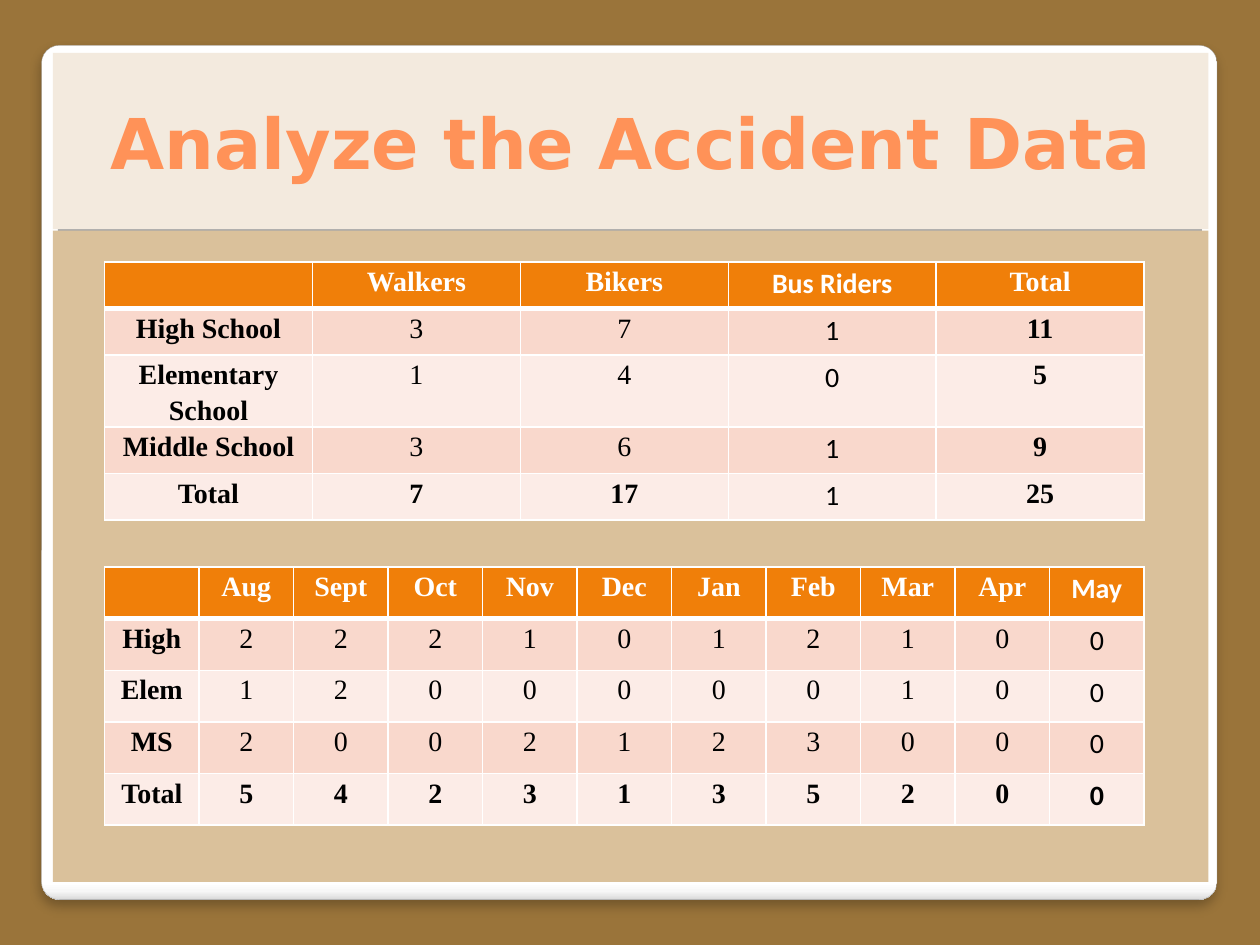
from lxml.etree import SubElement
from pptx import Presentation
from pptx.dml.color import RGBColor
from pptx.enum.shapes import MSO_SHAPE
from pptx.enum.text import MSO_ANCHOR, PP_ALIGN
from pptx.oxml import parse_xml
from pptx.oxml.ns import nsdecls, qn
from pptx.util import Inches, Pt

BROWN = RGBColor(0x9A, 0x74, 0x3A)
TAN = RGBColor(0xDA, 0xC1, 0x9B)
CREAM = RGBColor(0xF3, 0xEA, 0xDE)
GREY = RGBColor(0xA8, 0xA8, 0xA8)
FRAME_LINE = RGBColor(0xA4, 0xA4, 0xA4)
CORAL = RGBColor(0xFF, 0x92, 0x58)
ORANGE = RGBColor(0xF0, 0x7F, 0x09)
PINK = RGBColor(0xF9, 0xD8, 0xCC)
PALE_PINK = RGBColor(0xFC, 0xEC, 0xE7)
WHITE = RGBColor(0xFF, 0xFF, 0xFF)
BLACK = RGBColor(0x00, 0x00, 0x00)

FRAME_STOPS = [(0, "FFFFFF"), (98, "FFFFFF"), (99, "F7F7F7"), (100, "DADADA")]

ACCIDENTS_BY_TRAVEL = [
    ["", "Walkers", "Bikers", "Bus Riders", "Total"],
    ["High School", "3", "7", "1", "11"],
    ["Elementary School", "1", "4", "0", "5"],
    ["Middle School", "3", "6", "1", "9"],
    ["Total", "7", "17", "1", "25"],
]
ACCIDENTS_BY_MONTH = [
    ["", "Aug", "Sept", "Oct", "Nov", "Dec", "Jan", "Feb", "Mar", "Apr", "May"],
    ["High", "2", "2", "2", "1", "0", "1", "2", "1", "0", "0"],
    ["Elem", "1", "2", "0", "0", "0", "0", "0", "1", "0", "0"],
    ["MS", "2", "0", "0", "2", "1", "2", "3", "0", "0", "0"],
    ["Total", "5", "4", "2", "3", "1", "3", "5", "2", "0", "0"],
]


def write_text(text_frame, text, size=16, font="Times New Roman", color=BLACK,
               bold=False, spacing=None):
    paragraph = text_frame.paragraphs[0]
    paragraph.alignment = PP_ALIGN.CENTER
    paragraph.line_spacing = spacing
    paragraph.font.size = Pt(size)
    if not text:
        # An empty cell still needs a size, so that its row does not grow
        SubElement(paragraph._p, qn("a:endParaRPr")).set("sz", str(size * 100))
        return
    run = paragraph.add_run()
    run.text = text
    run.font.size = Pt(size)
    run.font.name = font
    run.font.bold = bold
    run.font.color.rgb = color


def add_panel(slide, left, top, width, height, fill, kind=MSO_SHAPE.RECTANGLE):
    shape = slide.shapes.add_shape(
        kind, Inches(left), Inches(top), Inches(width), Inches(height))
    shape.shadow.inherit = False
    shape.fill.solid()
    shape.fill.fore_color.rgb = fill
    shape.line.fill.background()
    if kind == MSO_SHAPE.ROUNDED_RECTANGLE:
        shape.adjustments[0] = 0.021
    return shape


def shade_frame(shape):
    """Give the frame its vertical gradient, thin line and soft shadow."""
    properties = shape._element.spPr
    stops = "".join(f'<a:gs pos="{position * 1000}"><a:srgbClr val="{color}"/></a:gs>'
                    for position, color in FRAME_STOPS)
    gradient = parse_xml(
        f'<a:gradFill {nsdecls("a")}><a:gsLst>{stops}</a:gsLst>'
        '<a:lin ang="5400000" scaled="0"/></a:gradFill>')
    properties.replace(properties.find(qn("a:solidFill")), gradient)
    shape.line.color.rgb = FRAME_LINE
    shape.line.width = Pt(0.16)
    shadow = parse_xml(
        f'<a:outerShdw {nsdecls("a")} blurRad="{Pt(6)}" dist="{Pt(4)}" dir="5400000" '
        'algn="t" rotWithShape="0"><a:srgbClr val="000000"><a:alpha val="25000"/>'
        '</a:srgbClr></a:outerShdw>')
    properties.find(qn("a:effectLst")).append(shadow)


def set_borders(cell, top=1, bottom=1):
    widths = {"lnL": 1, "lnR": 1, "lnT": top, "lnB": bottom}
    for index, (side, width) in enumerate(widths.items()):
        border = parse_xml(
            f'<a:{side} {nsdecls("a")} w="{Pt(width)}"><a:solidFill>'
            f'<a:srgbClr val="{WHITE}"/></a:solidFill></a:{side}>')
        cell._tc.get_or_add_tcPr().insert(index, border)


def add_data_table(slide, data, top, row_height, calibri_column,
                   bold_columns, plain_cells=()):
    column_count = len(data[0])
    last_row = len(data) - 1
    table = slide.shapes.add_table(
        len(data), column_count, Inches(0.83), Inches(top),
        Inches(8.25), Inches(row_height * len(data))).table
    table.first_row = True
    table.horz_banding = False
    for column in table.columns:
        column.width = Inches(8.25 / column_count)
    for row_index, values in enumerate(data):
        table.rows[row_index].height = Inches(row_height)
        header = row_index == 0
        band = PINK if row_index % 2 else PALE_PINK
        for column_index, text in enumerate(values):
            cell = table.cell(row_index, column_index)
            cell.margin_left = cell.margin_right = Inches(0.07)
            cell.margin_top = cell.margin_bottom = 0
            cell.fill.solid()
            cell.fill.fore_color.rgb = ORANGE if header else band
            set_borders(cell, top=3 if row_index == 1 else 1, bottom=3 if header else 1)
            bold = row_index in (0, last_row) or column_index in bold_columns
            write_text(
                cell.text_frame, text, spacing=1.15,
                font="Calibri" if column_index == calibri_column else "Times New Roman",
                color=WHITE if header else BLACK,
                bold=bold and (row_index, column_index) not in plain_cells)


def main():
    presentation = Presentation()
    presentation.slide_width = Inches(10)
    presentation.slide_height = Inches(7.5)
    slide = presentation.slides.add_slide(presentation.slide_layouts[6])
    slide.background.fill.solid()
    slide.background.fill.fore_color.rgb = BROWN

    # Frame, and the grey panel that shows as a rule under the title
    rounded = MSO_SHAPE.ROUNDED_RECTANGLE
    shade_frame(add_panel(slide, 0.33, 0.36, 9.33, 6.78, WHITE, rounded))
    add_panel(slide, 0.46, 0.47, 9.08, 6, GREY, rounded)

    # Body and title panels
    add_panel(slide, 0.42, 1.83, 9.17, 5.17, TAN)
    title = add_panel(slide, 0.42, 0.42, 9.17, 1.4, CREAM)
    title.text_frame.word_wrap = True
    title.text_frame.vertical_anchor = MSO_ANCHOR.MIDDLE
    write_text(title.text_frame, "Analyze the Accident Data", size=40,
               font="DejaVu Sans", color=CORAL, bold=True)

    # Accident tables
    add_data_table(slide, ACCIDENTS_BY_TRAVEL, 2.08, 0.37, calibri_column=3,
                   bold_columns=(0, 4), plain_cells=[(4, 3)])
    add_data_table(slide, ACCIDENTS_BY_MONTH, 4.5, 0.41, calibri_column=10,
                   bold_columns=(0,))

    presentation.save("out.pptx")


if __name__ == "__main__":
    main()
